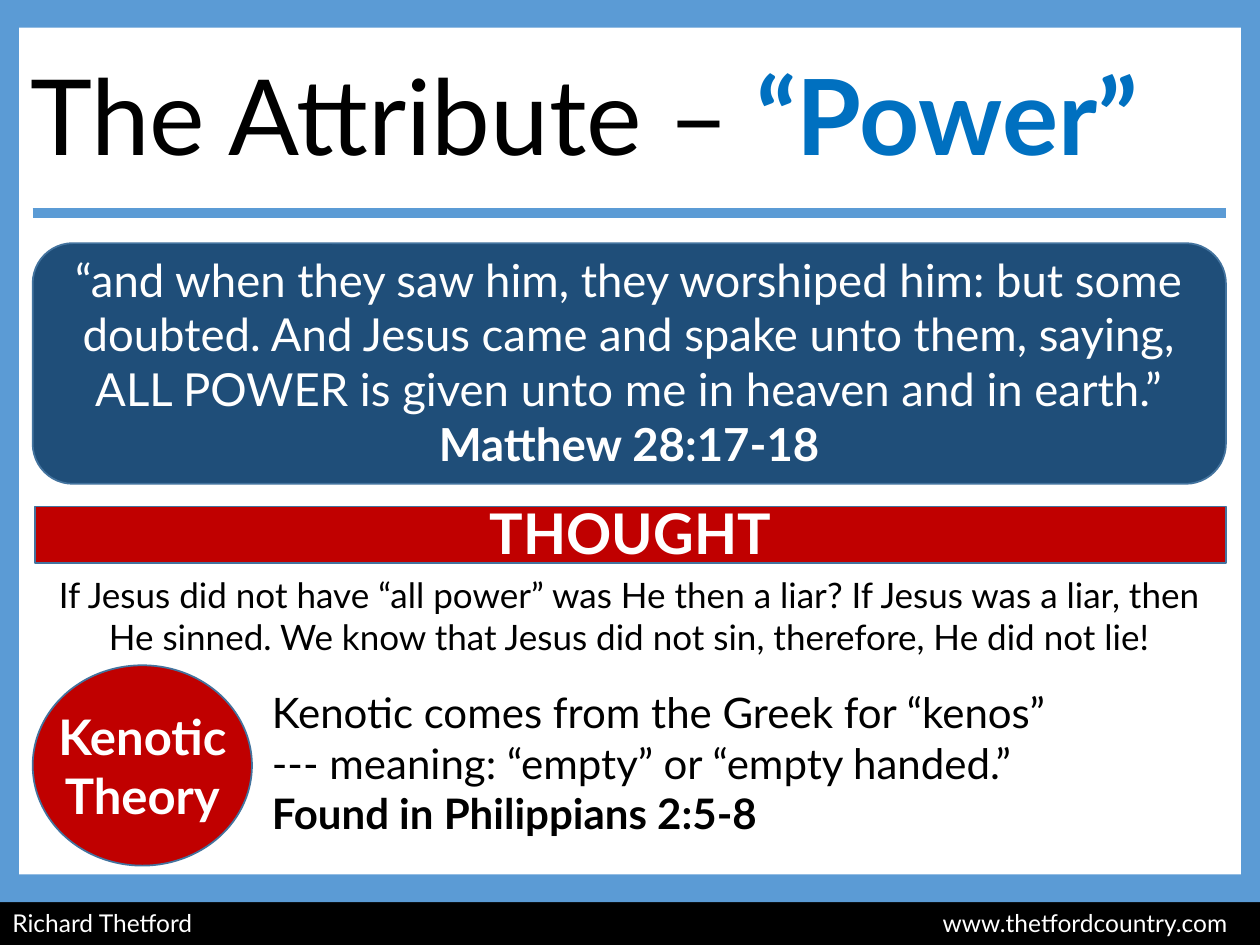
"""Build the slide on the attribute of power."""
from dataclasses import dataclass

import pptx
import pptx.dml.color
import pptx.enum.shapes
import pptx.enum.text
import pptx.oxml
import pptx.util
from pptx.util import Inches

SHAPE = pptx.enum.shapes.MSO_SHAPE
ALIGN = pptx.enum.text.PP_ALIGN
ANCHOR = pptx.enum.text.MSO_ANCHOR
FONT = "Lato"
BLACK, WHITE, RED = "000000", "FFFFFF", "C00000"
NAVY, SKY, BLUE, OUTLINE = "1F4E79", "5B9BD5", "0070C0", "43739E"


@dataclass(frozen=True)
class Panel:
    left: float
    top: float
    width: float
    height: float
    fill: str
    outline: str = ""
    kind: SHAPE = SHAPE.RECTANGLE


@dataclass(frozen=True)
class Label:
    left: float
    top: float
    width: float
    height: float
    text: str
    size: int
    color: str = BLACK
    align: ALIGN = ALIGN.LEFT
    bold: bool = False
    bold_last_line: bool = False


PANELS = [
    Panel(0, 7.16, 10, 0.34, BLACK),
    *(Panel(0, top, 10, 0.22, SKY) for top in (0, 6.94)),
    *(Panel(left, 0, 0.15, 7.04, SKY) for left in (0, 9.85)),
    Panel(0.26, 1.93, 9.47, 1.91, NAVY, OUTLINE, SHAPE.ROUNDED_RECTANGLE),
    Panel(0.26, 5.28, 1.74, 1.59, RED, OUTLINE, SHAPE.OVAL),
    Panel(0.28, 4.02, 9.45, 0.45, RED, OUTLINE),
]

LABELS = [
    Label(0, 7.16, 4, 0.34, "Richard Thetford", 14, WHITE),
    Label(5.84, 7.16, 4, 0.34, "www.thetfordcountry.com", 14, WHITE, ALIGN.RIGHT),
    Label(0.26, 1.95, 9.47, 1.85,
          "“and when they saw him, they worshiped him: but some doubted. "
          "And Jesus came and spake unto them, saying, ALL POWER is given "
          "unto me in heaven and in earth.”\vMatthew 28:17-18",
          26, WHITE, ALIGN.CENTER, bold_last_line=True),
    Label(0.26, 5.56, 1.74, 1.04, "Kenotic Theory", 28, WHITE, ALIGN.CENTER, bold=True),
    Label(2.06, 5.4, 7.6, 1.31,
          "Kenotic comes from the Greek for “kenos”\v"
          "--- meaning: “empty” or “empty handed.”\v"
          "Found in Philippians 2:5-8", 24, bold_last_line=True),
    Label(0.28, 3.91, 9.45, 0.64, "THOUGHT", 32, WHITE, ALIGN.CENTER, bold=True),
    Label(0.26, 4.5, 9.47, 0.77,
          "If Jesus did not have “all power” was He then a liar? If Jesus was a "
          "liar, then He sinned. We know that Jesus did not sin, therefore, "
          "He did not lie!", 20, align=ALIGN.CENTER),
]


def rgb(color: str) -> pptx.dml.color.RGBColor:
    """Turn a hex string into a colour."""
    return pptx.dml.color.RGBColor.from_string(color)


def format_span(span, size: int, color: str, bold: bool) -> None:
    """Set the font of one run."""
    span.font.name = FONT
    span.font.size = pptx.util.Pt(size)
    span.font.color.rgb = rgb(color)
    span.font.bold = bold


def draw_panel(page, panel: Panel) -> None:
    """Draw a filled shape, outlined if it has an outline colour."""
    shape = page.shapes.add_shape(
        panel.kind, Inches(panel.left), Inches(panel.top),
        Inches(panel.width), Inches(panel.height))
    shape.shadow.inherit = False
    shape.fill.solid()
    shape.fill.fore_color.rgb = rgb(panel.fill)
    if panel.outline:
        shape.line.color.rgb = rgb(panel.outline)
        shape.line.width = pptx.util.Pt(1)
    else:
        shape.line.fill.background()


def draw_label(page, label: Label):
    """Draw a wrapping text box and return it."""
    box = page.shapes.add_textbox(
        Inches(label.left), Inches(label.top),
        Inches(label.width), Inches(label.height))
    box.text_frame.word_wrap = True
    para = box.text_frame.paragraphs[0]
    para.text = label.text
    para.alignment = label.align
    for span in para.runs:
        format_span(span, label.size, label.color, label.bold)
    if label.bold_last_line:
        para.runs[-1].font.bold = True
    return box


def draw_title(page) -> None:
    """Draw the title with its highlighted word and the rule below it."""
    box = draw_label(page, Label(0.14, 0.24, 9.7, 1.45, "The Attribute – ", 60))
    box.text_frame.vertical_anchor = ANCHOR.MIDDLE
    para = box.text_frame.paragraphs[0]
    para.line_spacing = 0.9
    span = para.add_run()
    span.text = "“Power”"
    format_span(span, 60, BLUE, True)

    rule = page.shapes.add_connector(
        pptx.enum.shapes.MSO_CONNECTOR.STRAIGHT,
        Inches(0.26), Inches(1.69), Inches(9.73), Inches(1.69))
    rule.line.color.rgb = rgb(SKY)
    rule.line.width = pptx.util.Pt(6)
    rule.element.spPr.append(pptx.oxml.parse_xml(
        '<a:effectLst xmlns:a="http://schemas.openxmlformats.org/drawingml/2006/main"/>'))


def main() -> None:
    """Build and save the deck."""
    deck = pptx.Presentation()
    deck.slide_width, deck.slide_height = Inches(10), Inches(7.5)
    page = deck.slides.add_slide(deck.slide_layouts[6])
    for panel in PANELS:
        draw_panel(page, panel)
    draw_title(page)
    for label in LABELS:
        draw_label(page, label)
    deck.save("out.pptx")


if __name__ == "__main__":
    main()
